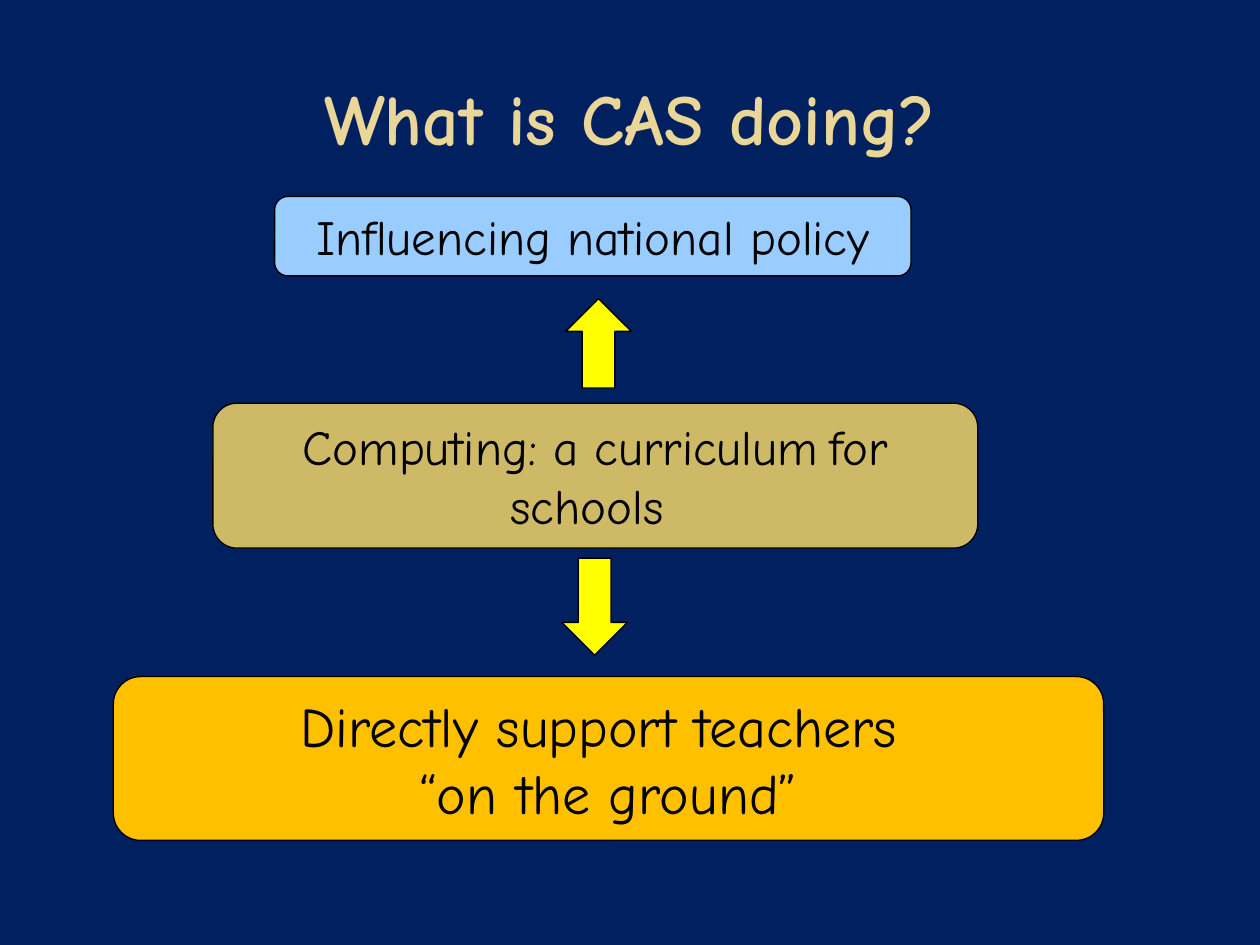
from dataclasses import dataclass

from pptx import Presentation
from pptx.dml.color import RGBColor
from pptx.enum.shapes import MSO_SHAPE
from pptx.enum.text import MSO_ANCHOR, MSO_AUTO_SIZE, PP_ALIGN
from pptx.util import Inches, Pt

ROUNDED = MSO_SHAPE.ROUNDED_RECTANGLE
UP, DOWN = MSO_SHAPE.UP_ARROW, MSO_SHAPE.DOWN_ARROW
MIDDLE, CENTER = MSO_ANCHOR.MIDDLE, PP_ALIGN.CENTER
GROW, FIXED = MSO_AUTO_SIZE.SHAPE_TO_FIT_TEXT, MSO_AUTO_SIZE.NONE
TITLE_ONLY = 5


@dataclass(frozen=True)
class Theme:
    font: str = "Comic Neue"
    background: str = "002060"
    title: str = "EAD696"
    ink: str = "000000"
    policy: str = "99CCFF"
    curriculum: str = "CEB966"
    teachers: str = "FFC000"
    arrow: str = "FFFF00"
    title_size: int = 41
    large: int = 32
    medium: int = 28
    small: int = 20
    outline: float = 0.75


THEME = Theme()


def rgb(value):
    return RGBColor.from_string(value)


def write(frame, paragraphs, color, bold=False, auto_size=GROW):
    """Fill a frame with centred paragraphs, each a list of (text, size) runs."""
    layout = {"word_wrap": True, "vertical_anchor": MIDDLE, "auto_size": auto_size}
    for name, value in layout.items():
        setattr(frame, name, value)
    for index, runs in enumerate(paragraphs):
        paragraph = frame.add_paragraph() if index else frame.paragraphs[0]
        paragraph.alignment = CENTER
        for text, size in runs:
            run = paragraph.add_run()
            run.text = text
            font_format = {"name": THEME.font, "size": Pt(size), "bold": bold}
            for name, value in font_format.items():
                setattr(run.font, name, value)
            run.font.color.rgb = rgb(color)


def add_title(slide, text):
    title = slide.shapes.title
    place = {"left": 0.5, "top": 0.3, "width": 9, "height": 1.25}
    for name, value in place.items():
        setattr(title, name, Inches(value))
    write(title.text_frame, [[(text, THEME.title_size)]], THEME.title, True, FIXED)


def add_outlined(slide, kind, box, fill):
    shape = slide.shapes.add_shape(kind, *map(Inches, box))
    shape.shadow.inherit = False
    shape.fill.solid()
    shape.fill.fore_color.rgb = rgb(fill)
    shape.line.color.rgb = rgb(THEME.ink)
    shape.line.width = Pt(THEME.outline)
    return shape


def add_activity(slide, box, fill, paragraphs):
    activity = add_outlined(slide, ROUNDED, box, fill)
    write(activity.text_frame, paragraphs, THEME.ink)


def main():
    prs = Presentation()
    prs.slide_width, prs.slide_height = Inches(10), Inches(7.5)
    slide = prs.slides.add_slide(prs.slide_layouts[TITLE_ONLY])
    slide.background.fill.solid()
    slide.background.fill.fore_color.rgb = rgb(THEME.background)

    add_title(slide, "What is CAS doing?")

    # Curriculum at the centre, policy above, teachers below
    add_activity(slide, (1.69, 3.2, 6.07, 1.15), THEME.curriculum, [
        [("Computing: a curriculum", THEME.medium),
         (" ", THEME.small),
         ("for schools ", THEME.medium)],
    ])
    add_activity(slide, (2.18, 1.56, 5.05, 0.63), THEME.policy, [
        [("Influencing national policy", THEME.medium)],
    ])
    add_activity(slide, (0.9, 5.37, 7.86, 1.3), THEME.teachers, [
        [("Directly support teachers ", THEME.large)],
        [("“on the ground”", THEME.large)],
    ])

    # Arrows leading out from the curriculum
    add_outlined(slide, DOWN, (4.46, 4.43, 0.52, 0.77), THEME.arrow)
    add_outlined(slide, UP, (4.49, 2.37, 0.52, 0.71), THEME.arrow)

    prs.save("out.pptx")


if __name__ == "__main__":
    main()
